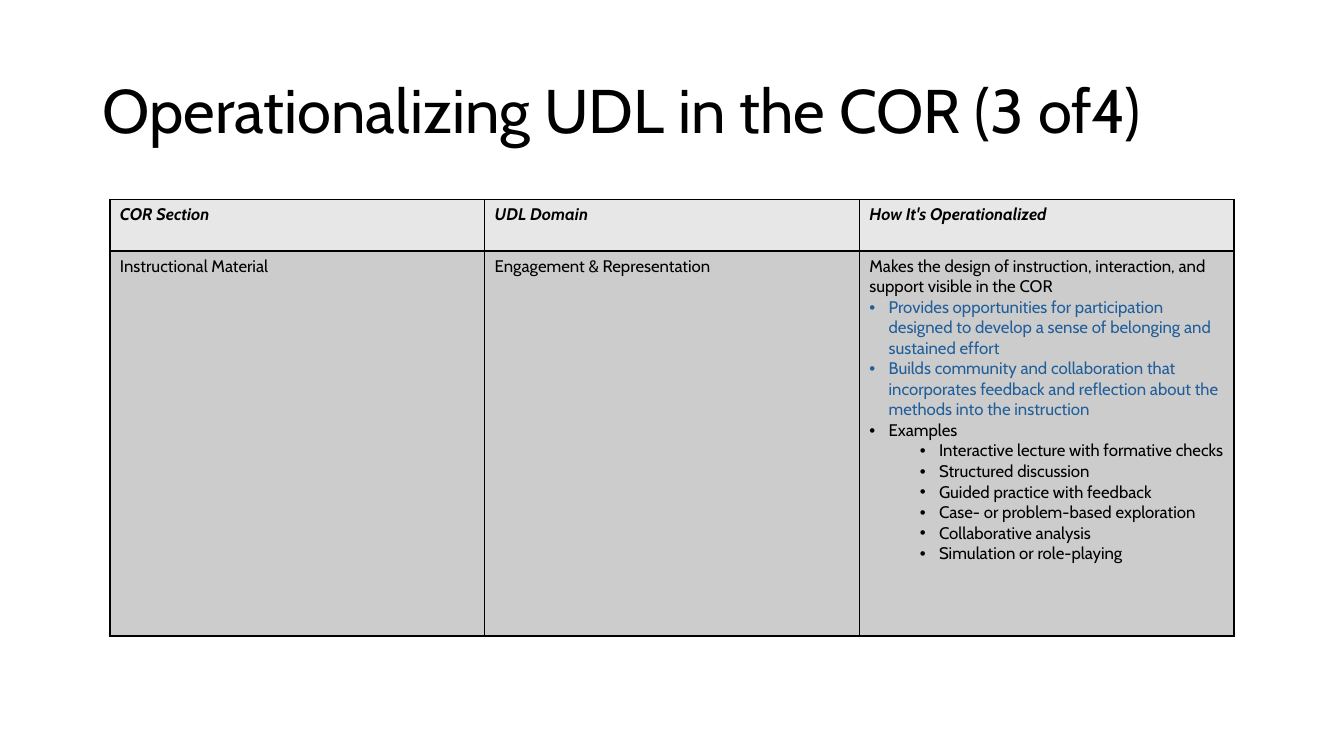
from dataclasses import dataclass

from lxml import etree
from pptx import Presentation
from pptx.dml.color import RGBColor
from pptx.enum import text as t
from pptx.oxml import ns
from pptx.util import Inches, Pt


@dataclass(frozen=True)
class Theme:
    font: str = "Cabin"
    title_size: int = 44
    body_size: int = 12
    ink: str = "000000"
    accent: str = "215F9A"
    header_fill: str = "E7E7E7"
    body_fill: str = "CCCCCC"
    border_width: int = 1


THEME = Theme()
BULLET_HANG = 0.19
LEVEL_STEP = 0.5

# Each line of a cell: text, bullet level (None for no bullet), colour
OPERATIONS = [
    ("Makes the design of instruction, interaction, and support visible in the COR",
     None, THEME.ink),
    ("Provides opportunities for participation designed to develop a sense of "
     "belonging and sustained effort", 0, THEME.accent),
    ("Builds community and collaboration that incorporates feedback and reflection "
     "about the methods into the instruction", 0, THEME.accent),
    ("Examples", 0, THEME.ink),
] + [(example, 1, THEME.ink) for example in (
    "Interactive lecture with formative checks",
    "Structured discussion",
    "Guided practice with feedback",
    "Case- or problem-based exploration",
    "Collaborative analysis",
    "Simulation or role-playing",
)]
HEADINGS = ["COR Section", "UDL Domain", "How It's Operationalized"]
ROWS = [
    [[(heading, None, THEME.ink)] for heading in HEADINGS],
    [[("Instructional Material", None, THEME.ink)],
     [("Engagement & Representation", None, THEME.ink)],
     OPERATIONS],
]


def add_run(paragraph, words, size, color, **formats):
    run = paragraph.add_run()
    run.text = words
    for key, value in {"name": THEME.font, "size": Pt(size), **formats}.items():
        setattr(run.font, key, value)
    run.font.color.rgb = RGBColor.from_string(color)


def add_bullet(paragraph, level):
    paragraph.level = level
    properties = paragraph._p.get_or_add_pPr()
    properties.set("marL", str(Inches(BULLET_HANG + LEVEL_STEP * level)))
    properties.set("indent", str(-Inches(BULLET_HANG)))
    etree.SubElement(properties, ns.qn("a:buFont"), typeface="Arial")
    etree.SubElement(properties, ns.qn("a:buChar"), char="•")


def add_borders(cell):
    """Draw all four sides; call before the cell fill is set."""
    properties = cell._tc.get_or_add_tcPr()
    for side in ("lnL", "lnR", "lnT", "lnB"):
        line = etree.SubElement(properties, ns.qn(f"a:{side}"),
                                w=str(Pt(THEME.border_width)))
        fill = etree.SubElement(line, ns.qn("a:solidFill"))
        etree.SubElement(fill, ns.qn("a:srgbClr"), val=THEME.ink)


def fill_cell(cell, lines, color, **formats):
    add_borders(cell)
    cell.fill.solid()
    cell.fill.fore_color.rgb = RGBColor.from_string(color)
    frame = cell.text_frame
    for index, (words, level, ink) in enumerate(lines):
        paragraph = frame.add_paragraph() if index else frame.paragraphs[0]
        if level is not None:
            add_bullet(paragraph, level)
        add_run(paragraph, words, THEME.body_size, ink, **formats)


def add_title(slide, words):
    box = slide.shapes.add_textbox(Inches(0.92), Inches(0.4), Inches(11.5), Inches(1.45))
    frame = box.text_frame
    frame.word_wrap = True
    frame.vertical_anchor = t.MSO_ANCHOR.MIDDLE
    heading = frame.paragraphs[0]
    heading.line_spacing = 0.9
    add_run(heading, words, THEME.title_size, THEME.ink)


def add_udl_table(slide):
    heights = [0.51, 3.82]
    table = slide.shapes.add_table(
        len(ROWS), len(HEADINGS), Inches(1.09), Inches(1.98),
        Inches(11.15), Inches(sum(heights))).table
    for row, height in zip(table.rows, heights):
        row.height = Inches(height)
    for row_index, row in enumerate(ROWS):
        is_header = row_index == 0
        color = THEME.header_fill if is_header else THEME.body_fill
        for column_index, lines in enumerate(row):
            fill_cell(table.cell(row_index, column_index), lines, color,
                      bold=is_header, italic=is_header)


def main():
    deck = Presentation()
    deck.slide_width, deck.slide_height = Inches(13.33), Inches(7.5)
    slide = deck.slides.add_slide(deck.slide_layouts[6])
    add_title(slide, "Operationalizing UDL in the COR (3 of4)")
    add_udl_table(slide)
    deck.save("out.pptx")


if __name__ == "__main__":
    main()
